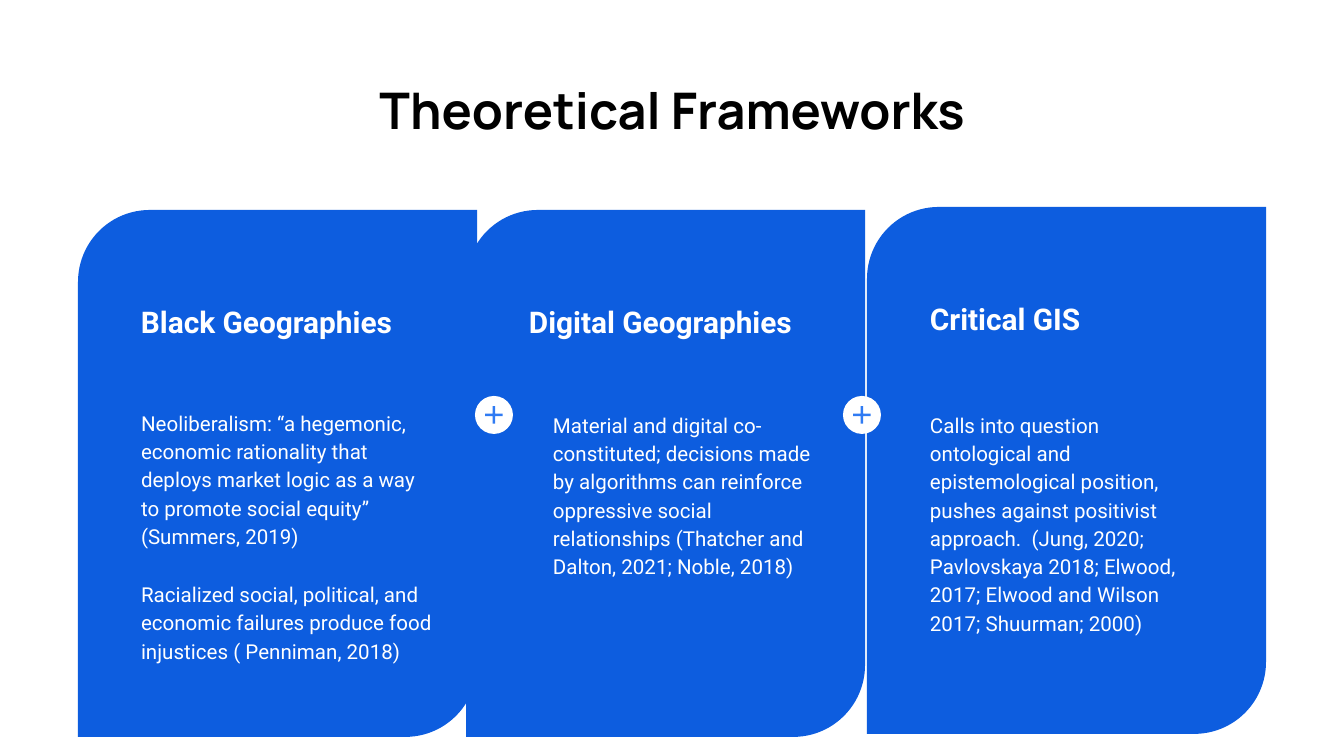
from dataclasses import dataclass

from pptx import Presentation
from pptx.dml.color import RGBColor
from pptx.enum.shapes import MSO_SHAPE as Preset
from pptx.enum.text import PP_ALIGN as Align
from pptx.util import Emu, Pt

# Content: cards and plus badges, in drawing order (px)
TITLE = "Theoretical Frameworks"
DIGITAL = {
    "corner": (466, 210), "heading": "Digital Geographies", "body_box": (540, 396, 298, 210),
    "body": ["Material and digital co-constituted; decisions made by algorithms can "
             "reinforce oppressive social relationships (Thatcher and Dalton, 2021; "
             "Noble, 2018)"],
}
CRITICAL = {
    "corner": (867, 207), "heading": "Critical GIS", "body_box": (917, 396, 298, 254),
    "body": ["Calls into question ontological and epistemological position, pushes "
             "against positivist approach.  (Jung, 2020; Pavlovskaya 2018; Elwood, 2017; "
             "Elwood and Wilson 2017; Shuurman; 2000)"],
}
BLACK = {
    "corner": (78, 210), "heading": "Black Geographies", "body_box": (128, 394, 319, 274),
    "body": ["Neoliberalism: “a hegemonic, economic rationality that deploys market logic "
             "as a way to promote social equity” (Summers, 2019)",
             "Racialized social, political, and economic failures produce food injustices "
             "( Penniman, 2018)"],
}
PLUS_LEFT, PLUS_RIGHT, PLUS_TOP = 475, 843, 396

# Layout (px)
SLIDE = (1344, 756)
TITLE_BOX = (46, 66, 1252, 91)
CARD = (399, 527)
HEADING_OFFSET, HEADING_SIZE = (50, 81), (298, 64)
BADGE, PLUS = 38, 24
INSET = 13
PX = 914400 / 134.4


@dataclass(frozen=True)
class Theme:
    card: str = "0D5DDF"
    plus: str = "307BF3"
    white: str = "FFFFFF"
    black: str = "000000"
    title_font: str = "Manrope"
    text_font: str = "Roboto"
    title_size: int = 27
    heading_size: int = 16
    body_size: int = 11
    gap: int = 16


THEME = Theme()
TITLE_FONT = {"name": THEME.title_font, "size": Pt(THEME.title_size), "bold": True}
HEADING_FONT = {"name": THEME.text_font, "size": Pt(THEME.heading_size), "bold": True}
BODY_FONT = {"name": THEME.text_font, "size": Pt(THEME.body_size), "bold": False}


def scaled(box):
    return [Emu(round(value * PX)) for value in box]


def set_values(target, values):
    for name, value in values.items():
        setattr(target, name, value)


def add_text(slide, box, texts, font, color, paragraph_format=None):
    frame = slide.shapes.add_textbox(*scaled(box)).text_frame
    frame.word_wrap = True
    margin = Emu(round(INSET * PX))
    set_values(frame, {f"margin_{side}": margin for side in ("left", "top", "right", "bottom")})
    for index, text in enumerate(texts):
        paragraph = frame.add_paragraph() if index else frame.paragraphs[0]
        set_values(paragraph, paragraph_format or {})
        if index:
            paragraph.space_before = Pt(THEME.gap)
        run = paragraph.add_run()
        run.text = text
        set_values(run.font, font)
        run.font.color.rgb = RGBColor.from_string(color)


def add_filled(slide, preset, box, color, adjustments=()):
    shape = slide.shapes.add_shape(preset, *scaled(box))
    shape.shadow.inherit = False
    shape.fill.solid()
    shape.fill.fore_color.rgb = RGBColor.from_string(color)
    shape.line.fill.background()
    for index, value in enumerate(adjustments):
        shape.adjustments[index] = value


def add_card(slide, card):
    left, top = card["corner"]
    add_filled(slide, Preset.ROUND_2_DIAG_RECTANGLE, (left, top, *CARD), THEME.card, (0.18, 0))
    heading_box = (left + HEADING_OFFSET[0], top + HEADING_OFFSET[1], *HEADING_SIZE)
    add_text(slide, heading_box, [card["heading"]], HEADING_FONT, THEME.white)
    add_text(slide, card["body_box"], card["body"], BODY_FONT, THEME.white,
             {"line_spacing": 1.15})


def add_plus(slide, left):
    inset = (BADGE - PLUS) / 2
    add_filled(slide, Preset.OVAL, (left, PLUS_TOP, BADGE, BADGE), THEME.white)
    add_filled(slide, Preset.MATH_PLUS, (left + inset, PLUS_TOP + inset, PLUS, PLUS),
               THEME.plus, (0.1,))


def main():
    presentation = Presentation()
    presentation.slide_width, presentation.slide_height = scaled(SLIDE)
    slide = presentation.slides.add_slide(presentation.slide_layouts[6])

    # Title
    add_text(slide, TITLE_BOX, [TITLE], TITLE_FONT, THEME.black, {"alignment": Align.CENTER})

    # Cards, with the badges that join them
    add_card(slide, DIGITAL)
    add_card(slide, CRITICAL)
    add_plus(slide, PLUS_RIGHT)
    add_card(slide, BLACK)
    add_plus(slide, PLUS_LEFT)

    presentation.save("out.pptx")


if __name__ == "__main__":
    main()
